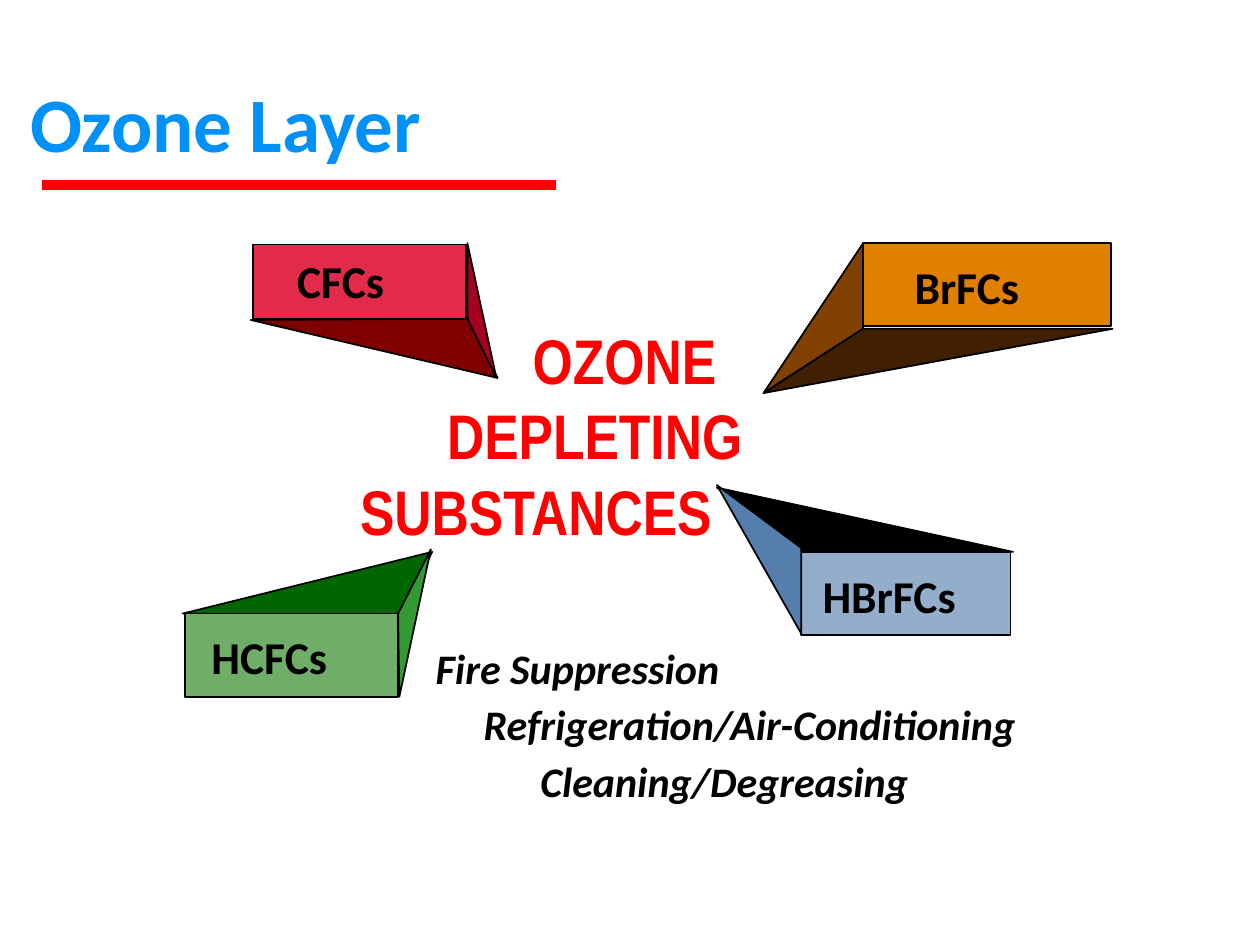
from dataclasses import dataclass

from lxml.etree import SubElement
from pptx import Presentation
from pptx.dml.color import RGBColor
from pptx.enum.shapes import MSO_CONNECTOR, MSO_SHAPE
from pptx.enum.text import MSO_ANCHOR, MSO_AUTO_SIZE
from pptx.oxml.ns import qn
from pptx.util import Inches, Pt

BLACK = RGBColor(0x00, 0x00, 0x00)
RED = RGBColor(0xFF, 0x00, 0x00)
TITLE_BLUE = RGBColor(0x00, 0x91, 0xF8)
STEEL_LIGHT = RGBColor(0x93, 0xAD, 0xCB)
STEEL = RGBColor(0x56, 0x7E, 0xAD)
ORANGE = RGBColor(0xDF, 0x80, 0x02)
BROWN = RGBColor(0x80, 0x40, 0x00)
DARK_BROWN = RGBColor(0x40, 0x20, 0x00)
GREEN_LIGHT = RGBColor(0x70, 0xAD, 0x69)
GREEN = RGBColor(0x33, 0x99, 0x33)
DARK_GREEN = RGBColor(0x00, 0x66, 0x00)
CRIMSON = RGBColor(0xE2, 0x2B, 0x4B)
DARK_CRIMSON = RGBColor(0xA5, 0x00, 0x21)
MAROON = RGBColor(0x80, 0x00, 0x00)

TITLE_FONT = dict(name="Calibri", size=Pt(44), bold=True)
LABEL_FONT = dict(name="Calibri", size=Pt(26), bold=True)
USE_FONT = dict(name="Calibri", size=Pt(24), bold=True, italic=True)
CENTRE_FONT = dict(name="Arial Narrow", size=Pt(36), bold=True)

Box = tuple[float, float, float, float]
Point = tuple[float, float]


@dataclass
class Line:
    text: str
    left: float = 0
    first: float = 0


@dataclass
class Face:
    color: RGBColor
    points: list[Point]


@dataclass
class Block:
    label: str
    label_box: Box
    front: Box
    color: RGBColor
    sides: list[Face]
    front_on_top: bool = False


BLOCKS = [
    Block("HBrFCs", (6.43, 4.46, 1.79, 0.53), (6.36, 4.38, 1.66, 0.66), STEEL_LIGHT, [
        Face(BLACK, [(8.04, 4.38), (5.69, 3.87), (6.36, 4.38)]),
        Face(STEEL, [(6.36, 5.03), (6.36, 4.35), (5.69, 3.85)])]),
    Block("BrFCs", (7.16, 2.01, 1.72, 0.53), (6.85, 1.93, 1.97, 0.66), ORANGE, [
        Face(BROWN, [(6.85, 1.93), (6.06, 3.12), (6.85, 2.61)]),
        Face(DARK_BROWN, [(8.83, 2.61), (6.85, 2.61), (6.06, 3.12)])]),
    Block("HCFCs", (1.58, 4.94, 1.48, 0.53), (1.47, 4.87, 1.69, 0.66), GREEN_LIGHT, [
        Face(DARK_GREEN, [(1.45, 4.87), (3.43, 4.38), (3.18, 4.89)]),
        Face(GREEN, [(3.17, 5.53), (3.42, 4.36), (3.16, 4.87)])], True),
    Block("CFCs", (2.26, 1.96, 1.48, 0.54), (2.01, 1.94, 1.69, 0.59), CRIMSON, [
        Face(MAROON, [(1.99, 2.54), (3.95, 3.0), (3.71, 2.53)]),
        Face(DARK_CRIMSON, [(3.71, 1.93), (3.94, 3.0), (3.71, 2.53)])], True),
]
USES = [Line("Fire Suppression"),
        Line("Refrigeration/Air-Conditioning", 0.38, 0),
        Line("Cleaning/Degreasing", 0.83, 0)]
CENTRE = [Line("OZONE", 1.48), Line("DEPLETING SUBSTANCES", 0.11, 0.69)]


def emu(values) -> list[Inches]:
    return [Inches(v) for v in values]


def add_text(shapes, box: Box, lines: list[Line], font: dict, color: RGBColor,
             spacing: float = 1.0, gap: float = 0):
    """Add a wrapped text box; each line carries its own indents in inches."""
    tf = shapes.add_textbox(*emu(box)).text_frame
    tf.word_wrap = True
    tf.auto_size = MSO_AUTO_SIZE.SHAPE_TO_FIT_TEXT
    for i, line in enumerate(lines):
        p = tf.paragraphs[0] if i == 0 else tf.add_paragraph()
        p.line_spacing = spacing
        p.space_before = Pt(gap if i else 0)
        pPr = p._p.get_or_add_pPr()
        pPr.set("marL", str(Inches(line.left)))
        pPr.set("indent", str(Inches(line.first)))
        r = p.add_run()
        r.text = line.text
        for key, value in font.items():
            setattr(r.font, key, value)
        r.font.color.rgb = color
    return tf


def paint(sp, color: RGBColor) -> None:
    sp.shadow.inherit = False
    sp.fill.solid()
    sp.fill.fore_color.rgb = color
    sp.line.color.rgb = BLACK
    sp.line.width = Pt(1)


def add_front(shapes, block: Block) -> None:
    paint(shapes.add_shape(MSO_SHAPE.RECTANGLE, *emu(block.front)), block.color)


def add_side(shapes, face: Face) -> None:
    start, *rest = [emu(point) for point in face.points]
    builder = shapes.build_freeform(*start)
    builder.add_line_segments(rest, close=True)
    paint(builder.convert_to_shape(), face.color)


def add_block(s, block: Block) -> None:
    shapes = s.shapes.add_group_shape().shapes
    if not block.front_on_top:
        add_front(shapes, block)
    for face in block.sides:
        add_side(shapes, face)
    if block.front_on_top:
        add_front(shapes, block)
    add_text(shapes, block.label_box, [Line(block.label)], LABEL_FONT, BLACK)


def add_title(s) -> None:
    tf = add_text(s.shapes, (0.14, 0.55, 8.92, 0.83), [Line("Ozone Layer")],
                  TITLE_FONT, TITLE_BLUE)
    tf.auto_size = MSO_AUTO_SIZE.NONE
    tf.vertical_anchor = MSO_ANCHOR.BOTTOM
    rule = s.shapes.add_connector(MSO_CONNECTOR.STRAIGHT, *emu((0.33, 1.47, 4.41, 1.47)))
    rule.line.color.rgb = RED
    rule.line.width = Pt(6)
    SubElement(rule._element.spPr, qn("a:effectLst"))


def main() -> None:
    prs = Presentation()
    prs.slide_width, prs.slide_height = Inches(10), Inches(7.5)
    s = prs.slides.add_slide(prs.slide_layouts[6])
    add_text(s.shapes, (3.36, 5.16, 5.92, 1.37), USES, USE_FONT, BLACK, 0.7, 12)
    add_text(s.shapes, (2.65, 2.5, 3.56, 1.92), CENTRE, CENTRE_FONT, RED)
    for block in BLOCKS:
        add_block(s, block)
    add_title(s)
    prs.save("out.pptx")


if __name__ == "__main__":
    main()
